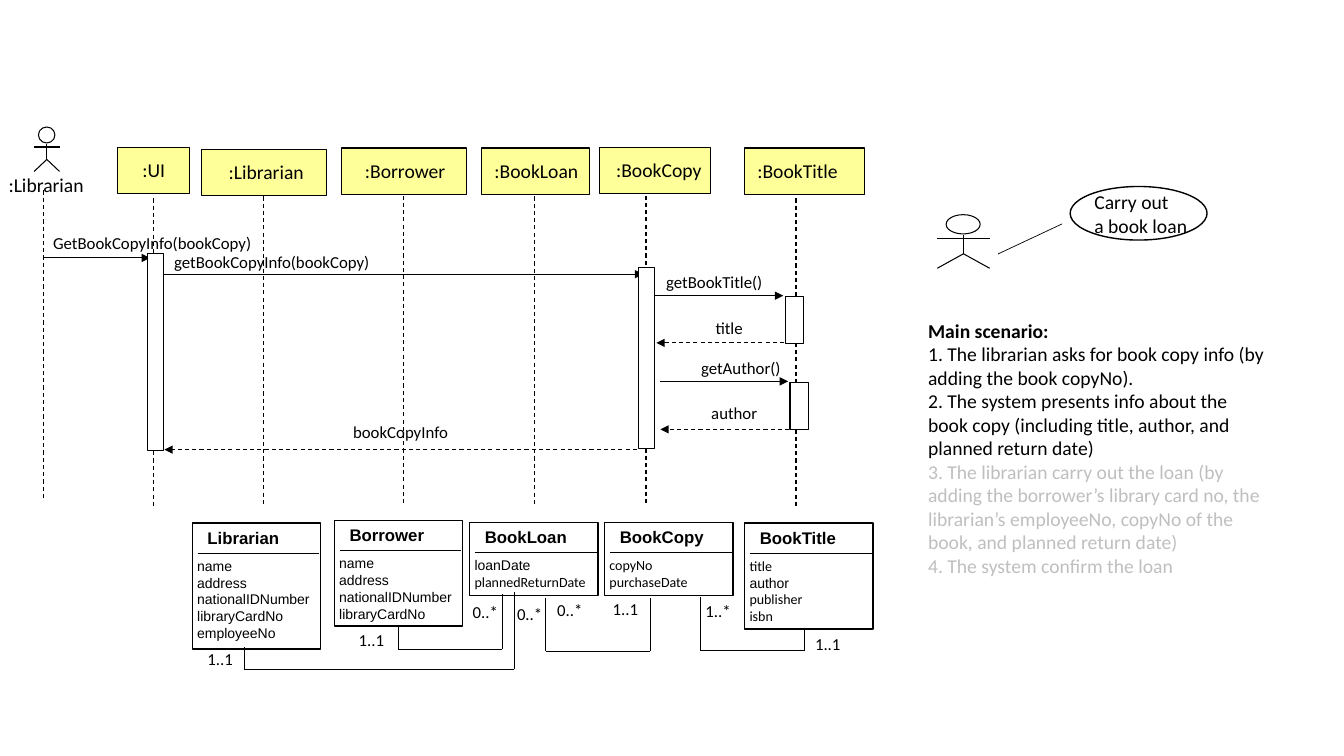
from collections import namedtuple

from lxml import etree
from pptx import Presentation
from pptx.dml.color import RGBColor
from pptx.enum.dml import MSO_LINE
from pptx.enum.shapes import MSO_CONNECTOR, MSO_SHAPE
from pptx.enum.text import MSO_ANCHOR, MSO_AUTO_SIZE, PP_ALIGN
from pptx.oxml.ns import qn
from pptx.util import Cm, Pt

Box = namedtuple("Box", "left top width height")

BLACK, WHITE, YELLOW, GREY = "000000", "FFFFFF", "FFFF99", "BFBFBF"
LIFELINE_LENGTH = 7.78
CLASS_WIDTH = 3.23

# name, left, top, width, label left, label width, lifeline x, lifeline top
OBJECTS = [
    (":UI", 2.97, 0.71, 1.8, 3, 1.75, 3.88, 2),
    (":Librarian", 5.08, 0.76, 3.15, 5.16, 3.1, 6.65, 1.95),
    (":Borrower", 8.61, 0.73, 3.15, 8.66, 3.1, 10.17, 1.93),
    (":BookLoan", 12.14, 0.73, 2.72, 11.63, 3.78, 13.46, 1.95),
    (":BookCopy", 15.11, 0.71, 2.79, 14.88, 3.45, 16.28, 1.93),
    (":BookTitle", 18.77, 0.73, 3.02, 18.59, 3.02, 20.06, 2),
]
# text, from x, to x, y, label left, label top, label width
CALLS = [
    ("GetBookCopyInfo(bookCopy)", 1.09, 3.78, 3.5, 1.09, 2.74, 6.07),
    ("getBookCopyInfo(bookCopy)", 4.11, 16.21, 3.91, 4.14, 3.22, 6.07),
    ("getBookTitle()", 16.51, 19.74, 4.45, 16.54, 3.73, 3.61),
    ("getAuthor()", 16.64, 19.86, 6.61, 17.42, 5.89, 3.61),
]
RETURNS = [
    ("title", 19.76, 16.54, 5.64, 17.04, 4.87, 2.67),
    ("author", 19.89, 16.64, 7.82, 17.17, 7.03, 2.67),
    ("bookCopyInfo", 16.05, 4.14, 8.33, 4.52, 7.49, 11.15),
]
ACTIVATIONS = [
    Box(3.71, 3.4, 0.41, 4.95),
    Box(16.08, 3.73, 0.41, 4.57),
    Box(19.79, 4.47, 0.46, 1.19),
    Box(19.91, 6.63, 0.46, 1.19),
]
# name, left, top, height, attributes with their fonts
PERSON = [("name", "Arial"), ("address", "Arial"),
          ("nationalIDNumber", "Arial"), ("libraryCardNo", "Arial")]
CLASSES = [
    ("Librarian", 0.05, 0.18, 3.18, PERSON + [("employeeNo", "Arial")]),
    ("Borrower", 3.63, 0.11, 2.67, PERSON),
    ("BookLoan", 7.04, 0.16, 1.85,
     [("loanDate", "Arial"), ("plannedReturnDate", "Calibri")]),
    ("BookCopy", 10.44, 0.16, 1.85,
     [("copyNo", "Calibri"), ("purchaseDate", "Calibri")]),
    ("BookTitle", 13.97, 0.18, 2.67,
     [("title", "Calibri"), ("author", "Arial"),
      ("publisher", "Calibri"), ("isbn", "Calibri")]),
]
# start x, start y, base y, end x, end y
ASSOCIATIONS = [
    (1.35, 3.31, 3.87, 8.15, 1.91),
    (5.23, 2.8, 3.36, 7.86, 1.96),
    (8.95, 2.06, 3.41, 11.59, 2.06),
    (12.85, 2.04, 3.4, 15.48, 2.82),
]
MULTIPLICITIES = [
    ("1..1", 0.18, 3.23), ("1..1", 3.99, 2.75), ("0..*", 6.86, 2.04),
    ("0..*", 7.98, 2.09), ("0..*", 8.99, 1.99), ("1..1", 10.39, 1.96),
    ("1..*", 12.73, 2.01), ("1..1", 15.49, 2.85),
]
SCENARIO = [
    ("Main scenario:", {"bold": True}),
    ("1. The librarian asks for book copy info (by adding the book copyNo).", {}),
    ("2. The system presents info about the book copy (including title, "
     "author, and planned return date)", {}),
    ("3. The librarian carry out the loan (by adding the borrower’s library "
     "card no, the librarian’s employeeNo, copyNo of the book, and planned "
     "return date)", {"color": GREY}),
    ("4. The system confirm the loan", {"color": GREY}),
]


def color(hex_value):
    return RGBColor.from_string(hex_value)


def add_line(slide, x1, y1, x2, y2, weight=0.75, dashed=False, arrow=False):
    line = slide.shapes.add_connector(
        MSO_CONNECTOR.STRAIGHT, Cm(x1), Cm(y1), Cm(x2), Cm(y2))
    line.line.color.rgb = color(BLACK)
    line.line.width = Pt(weight)
    if dashed:
        line.line.dash_style = MSO_LINE.DASH
    properties = line.line._get_or_add_ln()
    if arrow:
        etree.SubElement(properties, qn("a:tailEnd"), type="triangle")
    etree.SubElement(properties.getparent(), qn("a:effectLst"))


def add_outline(slide, box, fill=WHITE, weight=0.75, kind=MSO_SHAPE.RECTANGLE):
    outline = slide.shapes.add_shape(kind, *map(Cm, box))
    outline.shadow.inherit = False
    outline.fill.solid()
    outline.fill.fore_color.rgb = color(fill)
    outline.line.color.rgb = color(BLACK)
    outline.line.width = Pt(weight)


def add_text(slide, box, paragraphs, size, align=PP_ALIGN.LEFT):
    """Each paragraph is a text with a dict of its font values."""
    label = slide.shapes.add_textbox(*map(Cm, box))
    frame = label.text_frame
    settings = {"word_wrap": True, "auto_size": MSO_AUTO_SIZE.SHAPE_TO_FIT_TEXT,
                "vertical_anchor": MSO_ANCHOR.TOP}
    for name, value in settings.items():
        setattr(frame, name, value)
    for index, (text, changes) in enumerate(paragraphs):
        paragraph = frame.add_paragraph() if index else frame.paragraphs[0]
        paragraph.alignment = align
        run = paragraph.add_run()
        run.text = text
        values = {"name": "Calibri", "size": Pt(size), "bold": False, **changes}
        run.font.color.rgb = color(values.pop("color", BLACK))
        for name, value in values.items():
            setattr(run.font, name, value)
    return label


def add_actor(slide, box):
    left, top, width, height = box
    middle, right = left + width / 2, left + width
    neck, arms, hips, feet = (top + height * part for part in (0.38, 0.45, 0.73, 1))
    add_outline(slide, Box(left + width * 0.17, top, width * 0.65, height * 0.36),
                kind=MSO_SHAPE.OVAL)
    for limb in [(middle, neck, middle, hips), (middle, hips, right, feet),
                 (middle, hips, left, feet), (left, arms, right, arms)]:
        add_line(slide, *limb)


def add_sequence(slide, box):
    x, y = box.left, box.top

    # Calling actor
    caller = add_text(slide, Box(x - 0.41, y + 1.24, 3.15, 0.76),
                      [(":Librarian", {})], 14, PP_ALIGN.CENTER)
    caller.text_frame.margin_left = caller.text_frame.margin_right = 0
    add_actor(slide, Box(x + 0.86, y + 0.2, 0.64, 1.12))
    add_line(slide, x + 1.09, y + 1.8, x + 1.09, y + 1.8 + LIFELINE_LENGTH,
             dashed=True)

    # Objects and lifelines
    for name, left, top, width, label_left, label_width, life_x, life_top in OBJECTS:
        add_line(slide, x + life_x, y + life_top,
                 x + life_x, y + life_top + LIFELINE_LENGTH, dashed=True)
        add_outline(slide, Box(x + left, y + top, width, 1.18), YELLOW)
        add_text(slide, Box(x + label_left, y + top + 0.14, label_width, 0.86),
                 [(name, {})], 14, PP_ALIGN.CENTER)

    # Messages, with activation bars over their ends
    for messages, dashed, align in [(CALLS, False, PP_ALIGN.LEFT),
                                    (RETURNS, True, PP_ALIGN.CENTER)]:
        for text, start, end, line_y, left, top, width in messages:
            add_line(slide, x + start, y + line_y, x + end, y + line_y,
                     dashed=dashed, arrow=True)
            add_text(slide, Box(x + left, y + top, width, 0.76),
                     [(text, {})], 12, align)
    for bar in ACTIVATIONS:
        add_outline(slide, bar._replace(left=x + bar.left, top=y + bar.top))


def add_class(slide, box, name, attributes):
    left, top, width, height = box
    add_outline(slide, box, weight=1)
    add_line(slide, left + 0.13, top + 0.77, left + width - 0.03, top + 0.77, 0.5)
    add_text(slide, Box(left + 0.13, top, 3.51, 0.76),
             [(name, {"name": "Arial", "bold": True})], 12)
    add_text(slide, Box(left - 0.13, top + 0.74, 3.78, height - 0.74),
             [(text, {"name": font}) for text, font in attributes], 10)


def add_class_model(slide, box):
    x, y = box.left, box.top
    for name, left, top, height, attributes in CLASSES:
        add_class(slide, Box(x + left, y + top, CLASS_WIDTH, height), name, attributes)
    for x1, y1, base, x2, y2 in ASSOCIATIONS:
        for part in [(x1, y1, x1, base), (x1, base, x2, base), (x2, base, x2, y2)]:
            add_line(slide, x + part[0], y + part[1], x + part[2], y + part[3], 0.5)
    for text, left, top in MULTIPLICITIES:
        add_text(slide, Box(x + left, y + top, 2.16, 0.76), [(text, {})], 12)


def add_use_case(slide, box):
    x, y = box.left, box.top
    add_actor(slide, Box(x, y + 0.71, 1.32, 1.35))
    add_line(slide, x + 1.53, y + 1.7, x + 3.15, y + 0.94, 0.5)
    add_outline(slide, Box(x + 3.35, y, 3.45, 1.35), weight=1, kind=MSO_SHAPE.OVAL)
    add_text(slide, Box(x + 3.71, y - 0.03, 4.11, 1.45),
             [("Carry out", {}), ("a book loan", {})], 14)


def main():
    presentation = Presentation()
    presentation.slide_width, presentation.slide_height = Cm(33.87), Cm(19.05)
    slide = presentation.slides.add_slide(presentation.slide_layouts[6])
    add_sequence(slide, Box(0, 3, 22, 9.8))
    add_class_model(slide, Box(4.8, 13, 17.4, 4))
    add_use_case(slide, Box(23.62, 4.7, 7.8, 2.1))
    add_text(slide, Box(23.14, 7.9, 9.14, 6.83), SCENARIO, 14)
    presentation.save("out.pptx")


if __name__ == "__main__":
    main()
